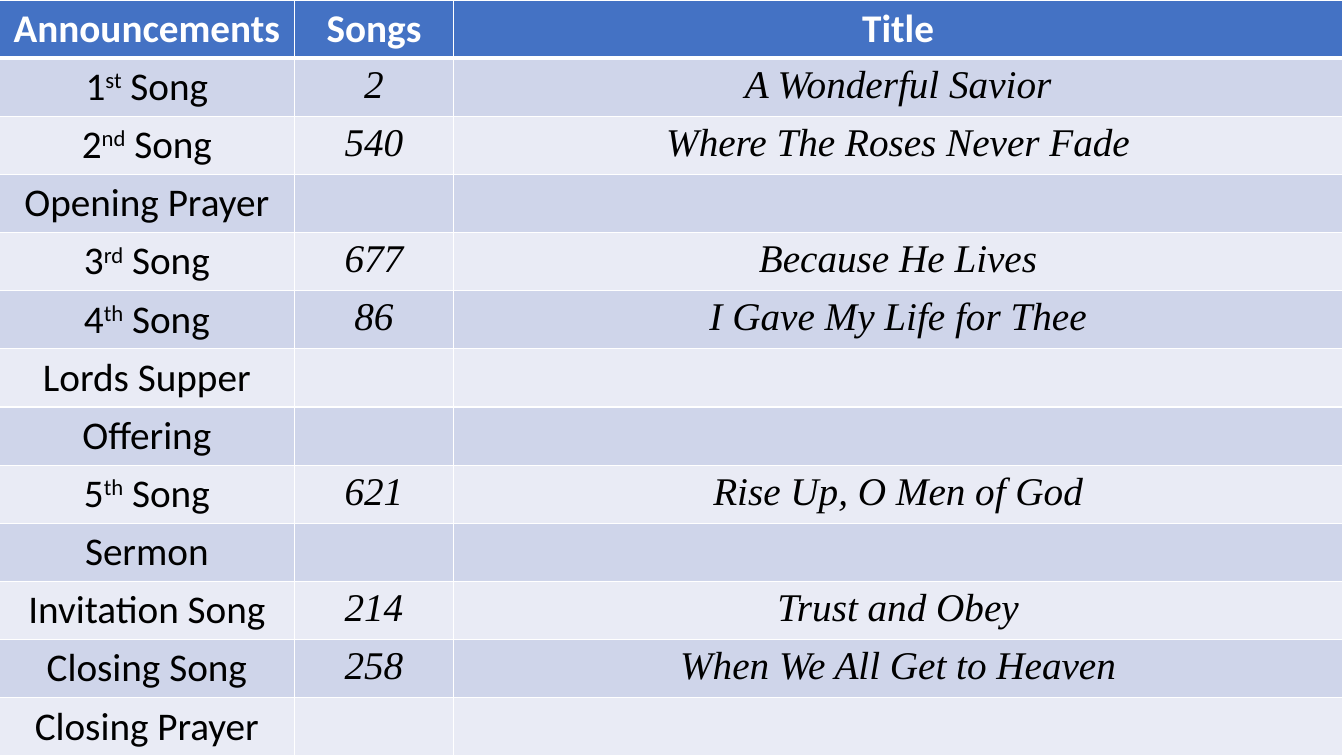
from lxml import etree
from pptx import Presentation
from pptx.dml.color import RGBColor
from pptx.enum.text import PP_ALIGN
from pptx.oxml.ns import qn
from pptx.util import Pt

CENTER = PP_ALIGN.CENTER
WHITE = RGBColor(0xFF, 0xFF, 0xFF)
BLACK = RGBColor(0, 0, 0)
HEADER_BLUE = RGBColor(0x44, 0x72, 0xC4)
BANDS = (RGBColor(0xE9, 0xEB, 0xF5), RGBColor(0xCF, 0xD5, 0xEA))

SLIDE_WIDTH, SLIDE_HEIGHT = 960, 540
COLUMN_SHARES = (0.22, 0.118, 0.662)
HEADER_FORMAT = {"name": "Calibri", "size": Pt(28), "bold": True, "italic": False}
LABEL_FORMAT = {"name": "Calibri", "size": Pt(28), "bold": False, "italic": False}
SONG_FORMAT = {"name": "Times New Roman", "size": Pt(28), "bold": False, "italic": True}

PROGRAM = [
    (("Announcements",), "Songs", "Title"),
    (("1", "st", " Song"), "2", "A Wonderful Savior"),
    (("2", "nd", " Song"), "540", "Where The Roses Never Fade"),
    (("Opening Prayer",), "", ""),
    (("3", "rd", " Song"), "677", "Because He Lives"),
    (("4", "th", " Song"), "86", "I Gave My Life for Thee"),
    (("Lords Supper",), "", ""),
    (("Offering",), "", ""),
    (("5", "th", " Song"), "621", "Rise Up, O Men of God"),
    (("Sermon",), "", ""),
    (("Invitation Song",), "214", "Trust and Obey"),
    (("Closing Song",), "258", "When We All Get to Heaven"),
    (("Closing Prayer",), "", ""),
]


def set_borders(cell, row_index):
    """Draw white cell borders, with a thick rule under the header row."""
    widths = {
        "a:lnL": 1,
        "a:lnR": 1,
        "a:lnT": 3 if row_index == 1 else 1,
        "a:lnB": 3 if row_index == 0 else 1,
    }
    properties = cell._tc.get_or_add_tcPr()
    for tag, width in widths.items():
        line = etree.SubElement(properties, qn(tag), w=str(Pt(width)))
        fill = etree.SubElement(line, qn("a:solidFill"))
        etree.SubElement(fill, qn("a:srgbClr"), val=str(WHITE))


def write_text(cell, parts, text_format, color):
    """Write centred runs, raising the second one as an ordinal suffix."""
    paragraph = cell.text_frame.paragraphs[0]
    paragraph.alignment = CENTER
    for index, text in enumerate(parts):
        run = paragraph.add_run()
        run.text = text
        for name, value in text_format.items():
            setattr(run.font, name, value)
        run.font.color.rgb = color
        if index == 1:
            run.font._element.set("baseline", "30000")


def add_program_table(slide, left, top, width, height):
    """Fill the given box with the order of service."""
    shape = slide.shapes.add_table(
        len(PROGRAM), len(COLUMN_SHARES), Pt(left), Pt(top), Pt(width), Pt(height)
    )
    table = shape.table
    for column, share in zip(table.columns, COLUMN_SHARES):
        column.width = Pt(width * share)
    for row_index, (label, number, title) in enumerate(PROGRAM):
        table.rows[row_index].height = Pt(height / len(PROGRAM))
        is_header = row_index == 0
        background = HEADER_BLUE if is_header else BANDS[row_index % 2]
        color = WHITE if is_header else BLACK
        label_format = HEADER_FORMAT if is_header else LABEL_FORMAT
        song_format = HEADER_FORMAT if is_header else SONG_FORMAT
        contents = (
            (label, label_format),
            ((number,), song_format),
            ((title,), song_format),
        )
        for column_index, (parts, text_format) in enumerate(contents):
            cell = table.cell(row_index, column_index)
            set_borders(cell, row_index)
            cell.fill.solid()
            cell.fill.fore_color.rgb = background
            if any(parts):
                write_text(cell, parts, text_format, color)


def main():
    """Build the order of service slide."""
    presentation = Presentation()
    presentation.slide_width = Pt(SLIDE_WIDTH)
    presentation.slide_height = Pt(SLIDE_HEIGHT)
    slide = presentation.slides.add_slide(presentation.slide_layouts[6])
    add_program_table(slide, -0.72, 0, SLIDE_WIDTH, SLIDE_HEIGHT)
    presentation.save("out.pptx")


if __name__ == "__main__":
    main()
